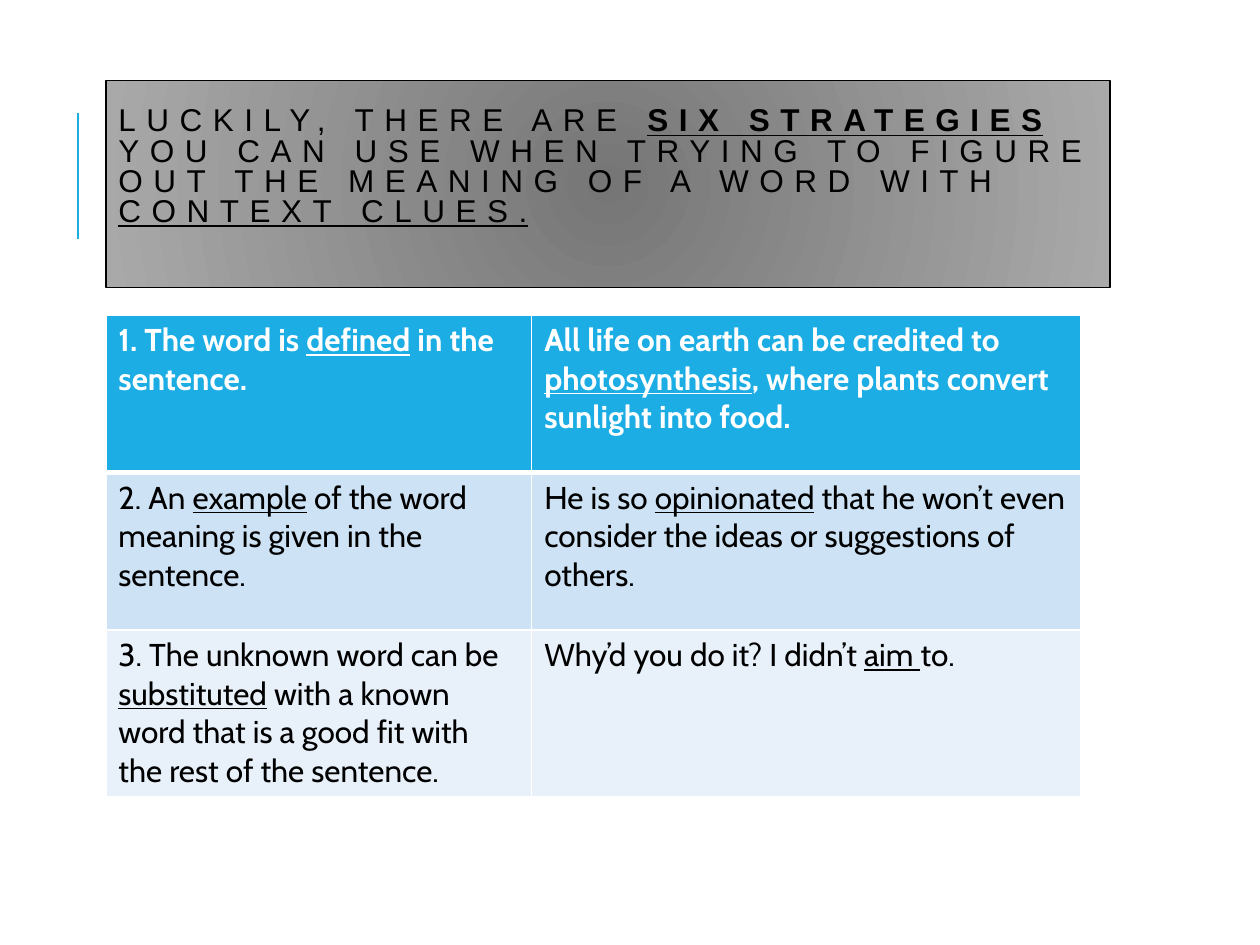
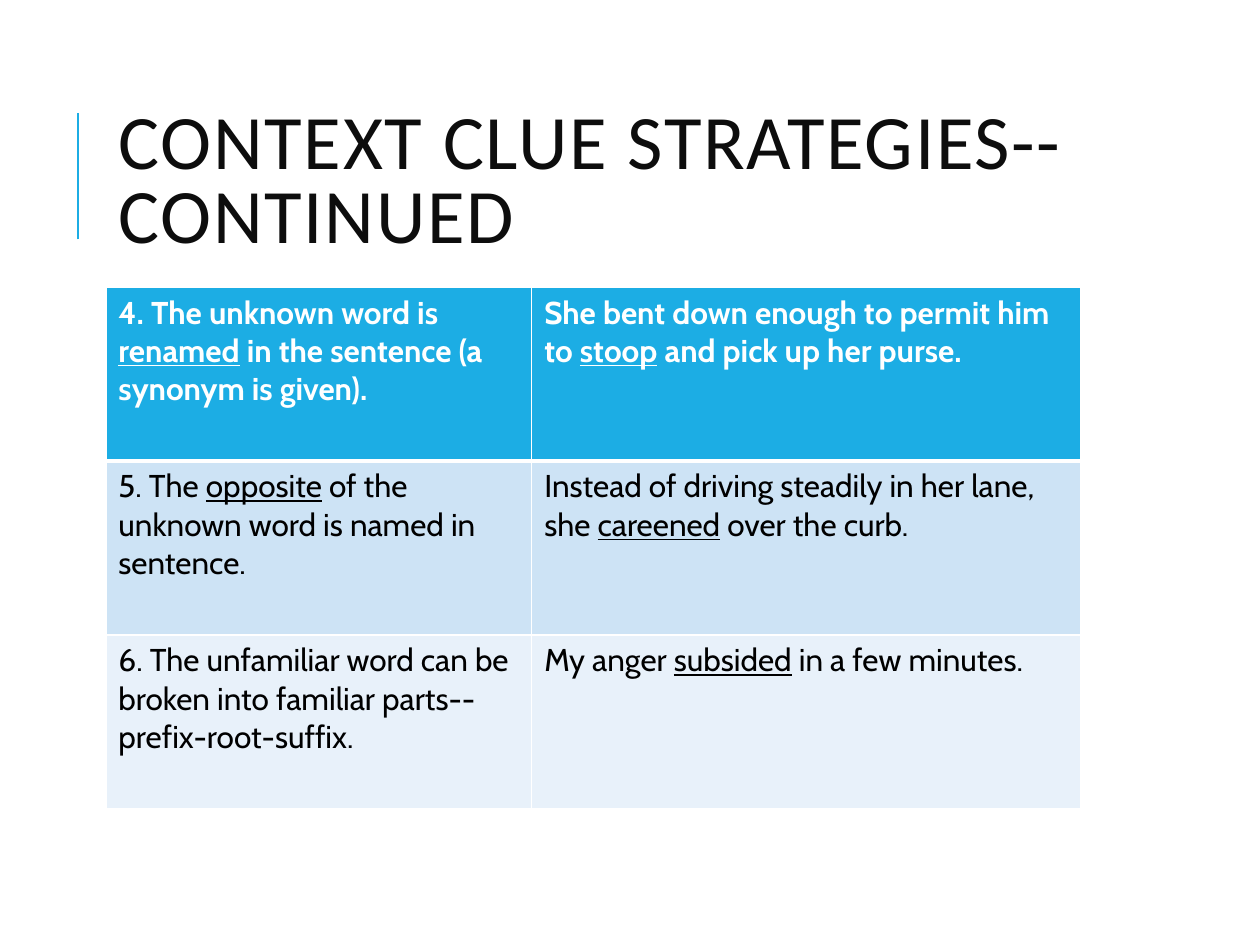
from dataclasses import dataclass

from lxml import etree
from pptx import Presentation
from pptx.dml.color import RGBColor
from pptx.enum.shapes import MSO_CONNECTOR
from pptx.enum.text import MSO_ANCHOR, MSO_AUTO_SIZE, PP_ALIGN
from pptx.oxml.ns import qn
from pptx.util import Inches, Pt

STRAIGHT = MSO_CONNECTOR.STRAIGHT
MIDDLE = MSO_ANCHOR.MIDDLE
NO_AUTOFIT = MSO_AUTO_SIZE.NONE
LEFT = PP_ALIGN.LEFT

# Shared colours and fonts
ACCENT = RGBColor(0x1C, 0xAD, 0xE4)
BAND_DARK = RGBColor(0xCD, 0xE3, 0xF5)
BAND_LIGHT = RGBColor(0xE8, 0xF1, 0xFA)
WHITE = RGBColor(0xFF, 0xFF, 0xFF)
BLACK = RGBColor(0x00, 0x00, 0x00)
NEAR_BLACK = RGBColor(0x0D, 0x0D, 0x0D)
PANEL_CENTRE = RGBColor(0x76, 0x76, 0x76)
PANEL_EDGE = RGBColor(0xA9, 0xA9, 0xA9)
ROW_FILLS = (ACCENT, BAND_DARK, BAND_LIGHT)
BODY_FONT = "Cabin"

# Shared layout
CONTENT_LEFT = Inches(0.84)
COLUMN_WIDTHS = (Inches(3.38), Inches(4.36))
TITLE_ONLY = 5


@dataclass
class TitleStyle:
    font: str
    size: int
    color: RGBColor
    letter_spacing: int  # hundredths of a point
    has_panel: bool = False
    bottom_inset: float = 0.05


@dataclass
class StrategySlide:
    title: str
    style: TitleStyle
    table_top: float
    row_height: float
    strategies: list[tuple[str, str]]  # strategy, example sentence
    bold_phrase: str = ""


# Words between underscores are underlined
SLIDES = [
    StrategySlide(
        "LUCKILY, THERE ARE _SIX STRATEGIES_ YOU CAN USE WHEN TRYING TO "
        "FIGURE OUT THE MEANING OF A WORD WITH _CONTEXT CLUES._",
        TitleStyle("Arial", 18, BLACK, 600, has_panel=True, bottom_inset=0.3),
        2.5, 1.25,
        [("1. The word is _defined_ in the sentence.",
          "All life on earth can be credited to _photosynthesis_, "
          "where plants convert sunlight into food."),
         ("2. An _example_ of the word meaning is given in the sentence.",
          "He is so _opinionated_ that he won’t even consider the ideas "
          "or suggestions of others."),
         ("3. The unknown word can be _substituted_ with a known word "
          "that is a good fit with the rest of the sentence.",
          "Why’d you do it? I didn’t _aim _to.")],
        bold_phrase="SIX STRATEGIES"),
    StrategySlide(
        "CONTEXT CLUE STRATEGIES--CONTINUED",
        TitleStyle("Calibri", 44, NEAR_BLACK, 100),
        2.28, 1.38,
        [("4. The unknown word is _renamed_ in the sentence "
          "(a synonym is given).",
          "She bent down enough to permit him to _stoop_ and pick up "
          "her purse."),
         ("5. The _opposite_ of the unknown word is named in sentence.",
          "Instead of driving steadily in her lane, she _careened_ "
          "over the curb."),
         ("6. The unfamiliar word can be broken into familiar "
          "parts--prefix-root-suffix.",
          "My anger _subsided_ in a few minutes.")]),
]


def add_marked_text(paragraph, text: str) -> None:
    for index, part in enumerate(text.split("_")):
        if part:
            run = paragraph.add_run()
            run.text = part
            if index % 2:
                run.font.underline = True


def add_accent_rule(slide) -> None:
    rule = slide.shapes.add_connector(
        STRAIGHT, Inches(0.62), Inches(1.9), Inches(0.62), Inches(0.9))
    rule.line.color.rgb = ACCENT
    rule.line.width = Pt(1.5)
    etree.SubElement(rule._element.spPr, qn("a:effectLst"))


def paint_panel(title) -> None:
    title.fill.gradient()
    stops = title.fill.gradient_stops
    for stop, position, color in zip(stops, (0, 1), (PANEL_CENTRE, PANEL_EDGE)):
        stop.position = position
        stop.color.rgb = color
    # Turn the linear gradient into a radial one
    gradient = title._element.spPr.find(qn("a:gradFill"))
    gradient.remove(gradient.find(qn("a:lin")))
    radial = etree.SubElement(gradient, qn("a:path"), {"path": "circle"})
    etree.SubElement(radial, qn("a:fillToRect"),
                     {side: "100000" for side in "ltrb"})
    title.line.color.rgb = BLACK
    title.line.width = Pt(0.75)


def format_title(slide, content: StrategySlide) -> None:
    style = content.style
    title = slide.shapes.title
    title.left, title.top = CONTENT_LEFT, Inches(0.64)
    title.width, title.height = Inches(7.97), Inches(1.64)
    if style.has_panel:
        paint_panel(title)

    frame = title.text_frame
    frame.word_wrap = True
    frame.auto_size = NO_AUTOFIT
    frame.vertical_anchor = MIDDLE
    frame.margin_bottom = Inches(style.bottom_inset)

    heading = frame.paragraphs[0]
    heading.alignment = LEFT
    heading.line_spacing = 0.8
    heading.font.name = style.font
    heading.font.size = Pt(style.size)
    heading.font.color.rgb = style.color
    add_marked_text(heading, content.title)
    for run in heading.runs:
        run._r.get_or_add_rPr().set("spc", str(style.letter_spacing))
        if run.text == content.bold_phrase:
            run.font.bold = True


def set_borders(cell, row: int) -> None:
    properties = cell._tc.get_or_add_tcPr()
    widths = {"lnL": 1, "lnR": 1,
              "lnT": 3 if row == 1 else 1, "lnB": 3 if row == 0 else 1}
    for position, (side, width) in enumerate(widths.items()):
        border = etree.Element(qn(f"a:{side}"), {"w": str(Pt(width))})
        fill = etree.SubElement(border, qn("a:solidFill"))
        etree.SubElement(fill, qn("a:srgbClr"), {"val": str(WHITE)})
        properties.insert(position, border)


def add_strategy_table(slide, content: StrategySlide) -> None:
    row_count = len(content.strategies)
    row_height = Inches(content.row_height)
    table = slide.shapes.add_table(
        row_count, len(COLUMN_WIDTHS), CONTENT_LEFT, Inches(content.table_top),
        sum(COLUMN_WIDTHS), row_height * row_count).table
    for column, width in zip(table.columns, COLUMN_WIDTHS):
        column.width = width

    for row, texts in enumerate(content.strategies):
        table.rows[row].height = row_height
        for column, text in enumerate(texts):
            cell = table.cell(row, column)
            cell.fill.solid()
            cell.fill.fore_color.rgb = ROW_FILLS[row]
            set_borders(cell, row)
            paragraph = cell.text_frame.paragraphs[0]
            paragraph.font.name = BODY_FONT
            paragraph.font.size = Pt(18)
            paragraph.font.bold = row == 0
            paragraph.font.color.rgb = WHITE if row == 0 else BLACK
            add_marked_text(paragraph, text)


def main() -> None:
    deck = Presentation()
    deck.slide_width, deck.slide_height = Inches(10), Inches(7.5)
    for content in SLIDES:
        slide = deck.slides.add_slide(deck.slide_layouts[TITLE_ONLY])
        add_accent_rule(slide)
        format_title(slide, content)
        add_strategy_table(slide, content)
    deck.save("out.pptx")


if __name__ == "__main__":
    main()
